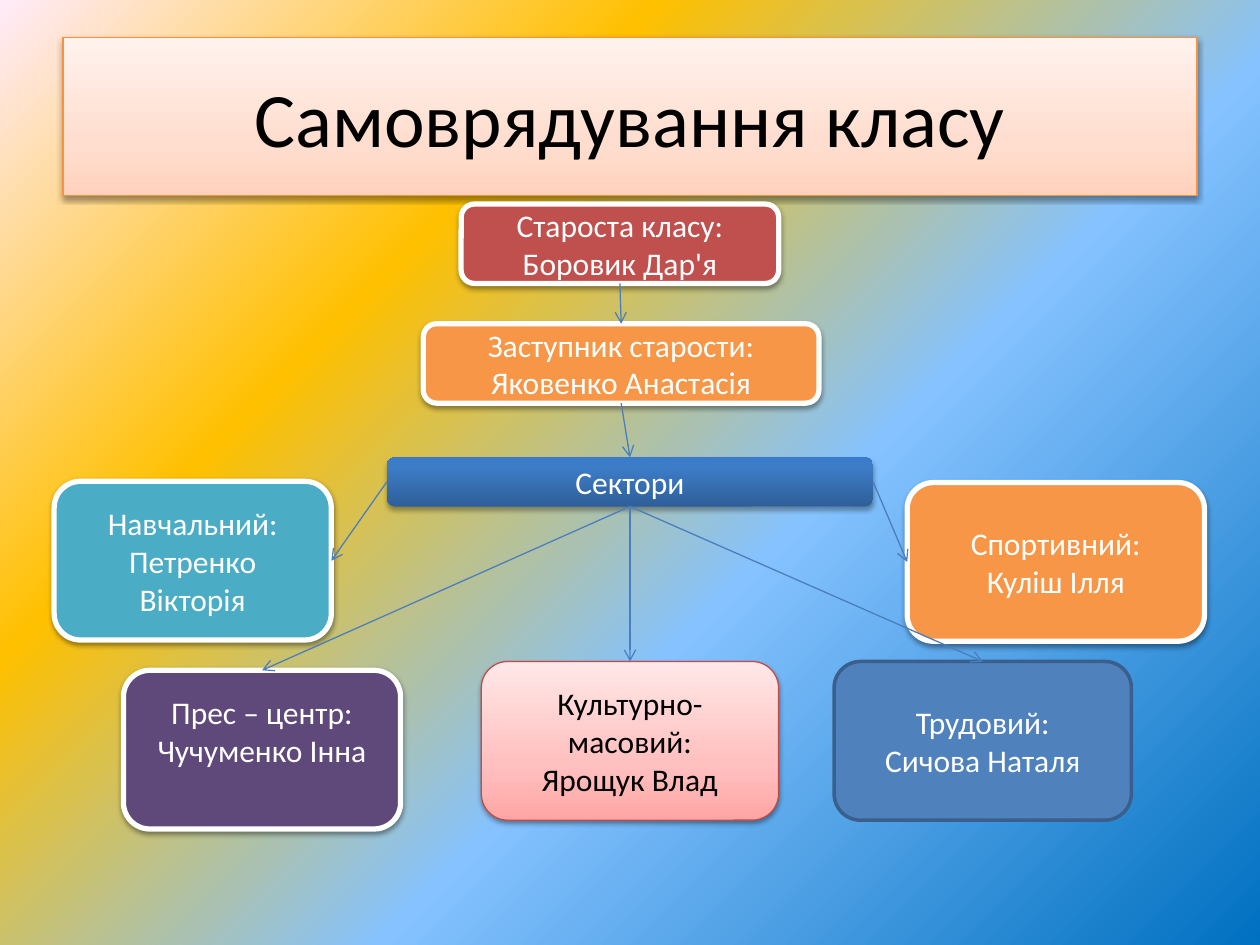
from lxml.etree import SubElement
from pptx import Presentation
from pptx.dml.color import RGBColor
from pptx.enum.shapes import MSO_CONNECTOR as CONN, MSO_SHAPE as SHAPE
from pptx.enum.text import MSO_ANCHOR as ANCHOR, PP_ALIGN as ALIGN
from pptx.oxml.ns import qn
from pptx.util import Inches, Pt

BLACK = RGBColor(0, 0, 0)
WHITE = RGBColor(255, 255, 255)
RED = RGBColor(0xC0, 0x50, 0x4D)
ORANGE = RGBColor(0xF7, 0x96, 0x46)
TEAL = RGBColor(0x4B, 0xAC, 0xC6)
PURPLE = RGBColor(0x5F, 0x49, 0x7A)
BLUE = RGBColor(0x4F, 0x81, 0xBD)
NAVY = RGBColor(0x3A, 0x5F, 0x8C)
ARROW = RGBColor(0x4B, 0x7E, 0xBC)
PEACH_EDGE = RGBColor(0xF6, 0x92, 0x40)
PINK_EDGE = RGBColor(0xBF, 0x4C, 0x48)

SKY = [(0, "0070C0"), (40, "85C2FF"), (70, "FFC000"), (100, "FFEBFA")]
PEACH = [(0, "FFD2BD"), (35, "FFDED0"), (100, "FFF2ED")]
PINK = [(0, "FFA6A5"), (35, "FFC0BF"), (100, "FFE7E7")]
STEEL = [(0, "2F5F99"), (80, "3D7CC7"), (100, "3A7CCB")]

FONT = "Calibri"
TITLE = "Самоврядування класу"
FRAME = dict(line=WHITE, width=3, color=WHITE, shadow=(38, 1.6))
BOXES = {
    "head": dict(FRAME, at=(3.66, 1.62, 2.52, 0.63), fill=RED,
                 text=["Староста класу:", "Боровик Дар'я"]),
    "deputy": dict(FRAME, at=(3.36, 2.57, 3.14, 0.63), fill=ORANGE,
                   text=["Заступник старости:", "Яковенко Анастасія"]),
    "sectors": dict(FRAME, at=(3.07, 3.63, 3.86, 0.39), fill=STEEL, line=None,
                    shadow=(35, 1.8), text=["Сектори"]),
    "culture": dict(at=(3.82, 5.25, 2.36, 1.26), fill=PINK, line=PINK_EDGE, width=0.75,
                    color=BLACK, shadow=(38, 1.6),
                    text=["Культурно-масовий:", "Ярощук Влад"]),
    "sport": dict(FRAME, at=(7.2, 3.83, 2.36, 1.26), fill=ORANGE,
                  text=["Спортивний:", "Куліш Ілля"]),
    "labour": dict(at=(6.62, 5.25, 2.36, 1.26), fill=BLUE, line=NAVY, width=2,
                   color=WHITE, shadow=None, text=["Трудовий:", "Сичова Наталя"]),
    "study": dict(FRAME, at=(0.43, 3.82, 2.2, 1.26), fill=TEAL,
                  text=["Навчальний:", "Петренко Вікторія"]),
    "press": dict(FRAME, at=(0.98, 5.32, 2.2, 1.26), fill=PURPLE, bottom=0.35,
                  text=["Прес – центр:", "Чучуменко Інна"]),
}
TOP, LEFT, BOTTOM, RIGHT = range(4)
ARROWS = [
    ("head", BOTTOM, "deputy", TOP),
    ("deputy", BOTTOM, "sectors", TOP),
    ("sectors", LEFT, "study", RIGHT),
    ("sectors", RIGHT, "sport", LEFT),
    ("sectors", BOTTOM, "culture", TOP),
    ("sectors", BOTTOM, "press", TOP),
    ("sectors", BOTTOM, "labour", TOP),
]


def add(parent, tag, **attrs):
    """Append a DrawingML child element."""
    return SubElement(parent, qn(tag), {k: str(v) for k, v in attrs.items()})


def set_gradient(fill, owner, stops):
    """Give a fill its colour stops, the first at the bottom."""
    fill.gradient()
    fill.gradient_angle = 90
    grad = next(owner.iter(qn("a:gradFill")))
    stop_list = grad.find(qn("a:gsLst"))
    for old in list(stop_list):
        stop_list.remove(old)
    for pos, color in stops:
        add(add(stop_list, "a:gs", pos=pos * 1000), "a:srgbClr", val=color)
    return grad


def set_background(slide):
    """Spread the sky colours out from the lower right corner."""
    grad = set_gradient(slide.background.fill, slide._element, SKY)
    grad.remove(grad.find(qn("a:lin")))
    add(add(grad, "a:path", path="circle"), "a:fillToRect", l=100000, t=100000)


def style(s, at, text, fill, line, width, color, shadow, size=18, bottom=0.05):
    """Place, paint and fill a shape with centred text."""
    s.left, s.top, s.width, s.height = map(Inches, at)
    if isinstance(fill, list):
        set_gradient(s.fill, s._element.spPr, fill)
    else:
        s.fill.solid()
        s.fill.fore_color.rgb = fill
    if line is None:
        s.line.fill.background()
    else:
        s.line.color.rgb = line
        s.line.width = Pt(width)
    s.shadow.inherit = False
    if shadow:
        alpha, dist = shadow
        effects = s._element.spPr.find(qn("a:effectLst"))
        outer = add(effects, "a:outerShdw", blurRad=Pt(3.1), dist=Pt(dist),
                    dir=5400000, rotWithShape=0)
        add(add(outer, "a:srgbClr", val="000000"), "a:alpha", val=alpha * 1000)
    tf = s.text_frame
    tf.word_wrap = True
    tf.vertical_anchor = ANCHOR.MIDDLE
    tf.margin_bottom = Inches(bottom)
    for i, words in enumerate(text):
        p = tf.add_paragraph() if i else tf.paragraphs[0]
        p.alignment = ALIGN.CENTER
        r = p.add_run()
        r.text = words
        for key, value in dict(name=FONT, size=Pt(size)).items():
            setattr(r.font, key, value)
        r.font.color.rgb = color


def add_arrow(slide, start, start_side, end, end_side):
    """Join two boxes with an open arrow."""
    c = slide.shapes.add_connector(CONN.STRAIGHT, 0, 0, 0, 0)
    c.begin_connect(start, start_side)
    c.end_connect(end, end_side)
    c.line.color.rgb = ARROW
    c.line.width = Pt(0.75)
    add(c.line._get_or_add_ln(), "a:tailEnd", type="arrow")
    add(c._element.spPr, "a:effectLst")


def main():
    """Build the class self-government chart."""
    prs = Presentation()
    prs.slide_width, prs.slide_height = Inches(10), Inches(7.5)
    slide = prs.slides.add_slide(prs.slide_layouts[5])
    set_background(slide)
    style(slide.shapes.title, (0.5, 0.3, 9, 1.25), [TITLE], PEACH, PEACH_EDGE,
          0.75, BLACK, (38, 1.6), size=44)
    shapes = {}
    for name, box in BOXES.items():
        shapes[name] = slide.shapes.add_shape(SHAPE.ROUNDED_RECTANGLE, 0, 0, 0, 0)
        style(shapes[name], **box)
    for start, start_side, end, end_side in ARROWS:
        add_arrow(slide, shapes[start], start_side, shapes[end], end_side)
    prs.save("out.pptx")


if __name__ == "__main__":
    main()
